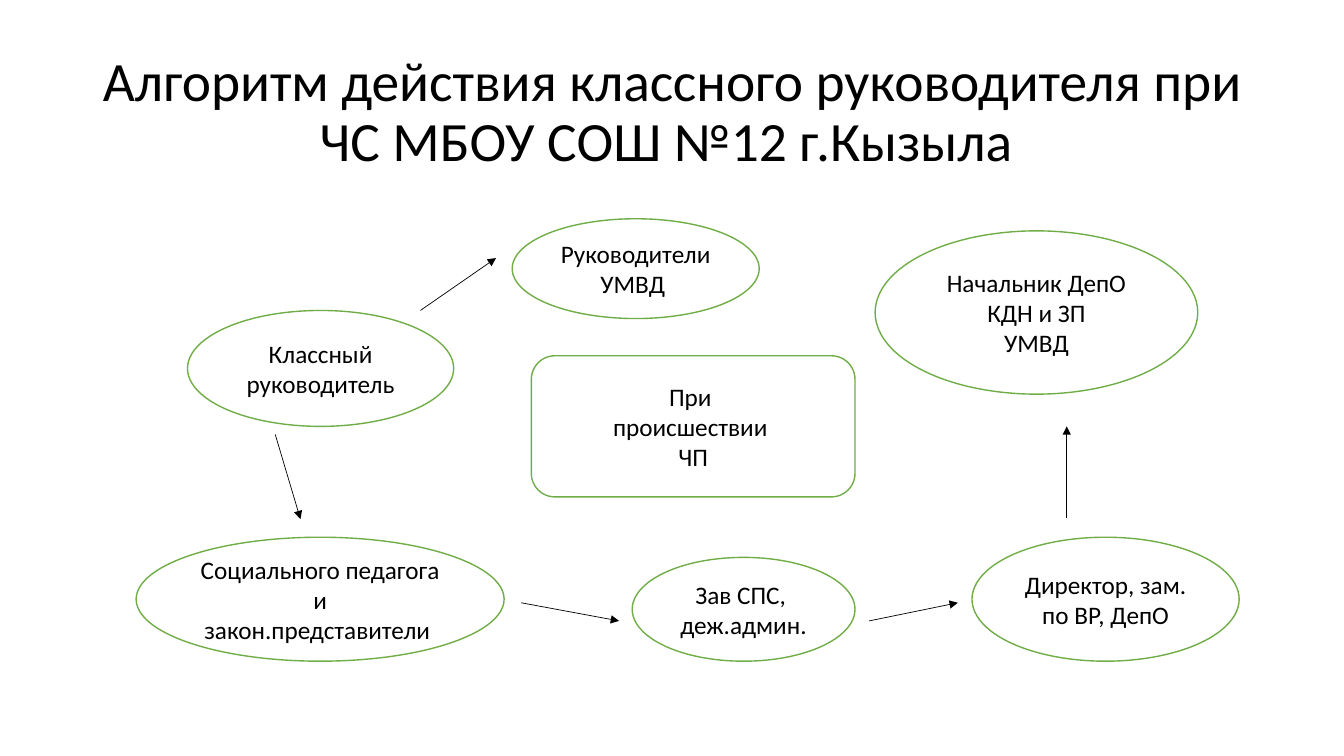
from dataclasses import dataclass

from lxml import etree
from pptx import Presentation
from pptx.dml.color import RGBColor
from pptx.enum.shapes import MSO_CONNECTOR, MSO_SHAPE
from pptx.enum.text import MSO_ANCHOR, PP_ALIGN
from pptx.oxml.ns import qn
from pptx.util import Inches, Pt

ELLIPSE = MSO_SHAPE.OVAL
ROUNDED = MSO_SHAPE.ROUNDED_RECTANGLE
STRAIGHT = MSO_CONNECTOR.STRAIGHT
CENTER = PP_ALIGN.CENTER
MIDDLE = MSO_ANCHOR.MIDDLE
BLANK_LAYOUT = 6


@dataclass(frozen=True)
class Theme:
    font: str = "Calibri"
    text: RGBColor = RGBColor(0x00, 0x00, 0x00)
    fill: RGBColor = RGBColor(0xFF, 0xFF, 0xFF)
    outline: RGBColor = RGBColor(0x70, 0xAD, 0x47)
    arrow: RGBColor = RGBColor(0x00, 0x00, 0x00)
    title_size: float = 39.6
    body_size: float = 18
    outline_width: float = 1
    arrow_width: float = 0.5


TITLE = "Алгоритм действия классного руководителя при ЧС МБОУ СОШ №12 г.Кызыла "
TITLE_BOX = (0.92, 0.4, 11.5, 1.45)

# Each node: preset, (left, top, width, height), paragraphs
NODES = [
    (ROUNDED, (5.27, 3.53, 3.21, 1.4), ["При ", "происшествии ", "ЧП"]),
    (ELLIPSE, (5.08, 2.17, 2.45, 0.99), ["Руководители УМВД "]),
    (ELLIPSE, (1.86, 3.08, 2.64, 1.15), ["Классный руководитель"]),
    (ELLIPSE, (1.35, 5.33, 3.65, 1.23), ["Социального педагога и закон.представители "]),
    (ELLIPSE, (6.27, 5.53, 2.21, 1.03), ["Зав СПС, ", "деж.админ."]),
    (ELLIPSE, (9.64, 5.33, 2.65, 1.23), ["Директор, зам. по ВР, ДепО"]),
    (ELLIPSE, (8.68, 2.29, 3.2, 1.62), ["Начальник ДепО", "КДН и ЗП", "УМВД"]),
]

# Each arrow: start x, start y, end x, end y
ARROWS = [
    (4.17, 3.08, 4.92, 2.56),
    (2.73, 4.31, 2.98, 5.15),
    (5.17, 5.98, 6.14, 6.16),
    (8.62, 6.16, 9.5, 5.98),
    (10.58, 5.14, 10.58, 4.23),
]


class SlideBuilder:
    """Draws elements on one slide in one theme."""

    def __init__(self, slide, theme):
        self.slide = slide
        self.theme = theme

    def add_text(self, shape, lines, size, line_spacing=1.0):
        frame = shape.text_frame
        for name, value in {"word_wrap": True, "vertical_anchor": MIDDLE}.items():
            setattr(frame, name, value)
        font_format = {"name": self.theme.font, "size": Pt(size)}
        for index, line in enumerate(lines):
            paragraph = frame.add_paragraph() if index else frame.paragraphs[0]
            paragraph.alignment = CENTER
            paragraph.line_spacing = line_spacing
            run = paragraph.add_run()
            run.text = line
            for name, value in font_format.items():
                setattr(run.font, name, value)
            run.font.color.rgb = self.theme.text

    def title(self, box, text):
        shape = self.slide.shapes.add_textbox(*map(Inches, box))
        self.add_text(shape, [text], self.theme.title_size, 0.9)

    def node(self, preset, box, lines):
        shape = self.slide.shapes.add_shape(preset, *map(Inches, box))
        shape.shadow.inherit = False
        shape.fill.solid()
        shape.fill.fore_color.rgb = self.theme.fill
        shape.line.color.rgb = self.theme.outline
        shape.line.width = Pt(self.theme.outline_width)
        self.add_text(shape, lines, self.theme.body_size)

    def arrow(self, *ends):
        connector = self.slide.shapes.add_connector(STRAIGHT, *map(Inches, ends))
        connector.line.color.rgb = self.theme.arrow
        connector.line.width = Pt(self.theme.arrow_width)
        properties = connector.element.spPr
        line = properties.find(qn("a:ln"))
        etree.SubElement(line, qn("a:tailEnd"), type="triangle")
        etree.SubElement(properties, qn("a:effectLst"))


def main():
    presentation = Presentation()
    presentation.slide_width = Inches(13.33)
    presentation.slide_height = Inches(7.5)
    slide = presentation.slides.add_slide(presentation.slide_layouts[BLANK_LAYOUT])
    builder = SlideBuilder(slide, Theme())

    builder.title(TITLE_BOX, TITLE)
    for node in NODES:
        builder.node(*node)
    for arrow in ARROWS:
        builder.arrow(*arrow)

    presentation.save("out.pptx")


if __name__ == "__main__":
    main()
